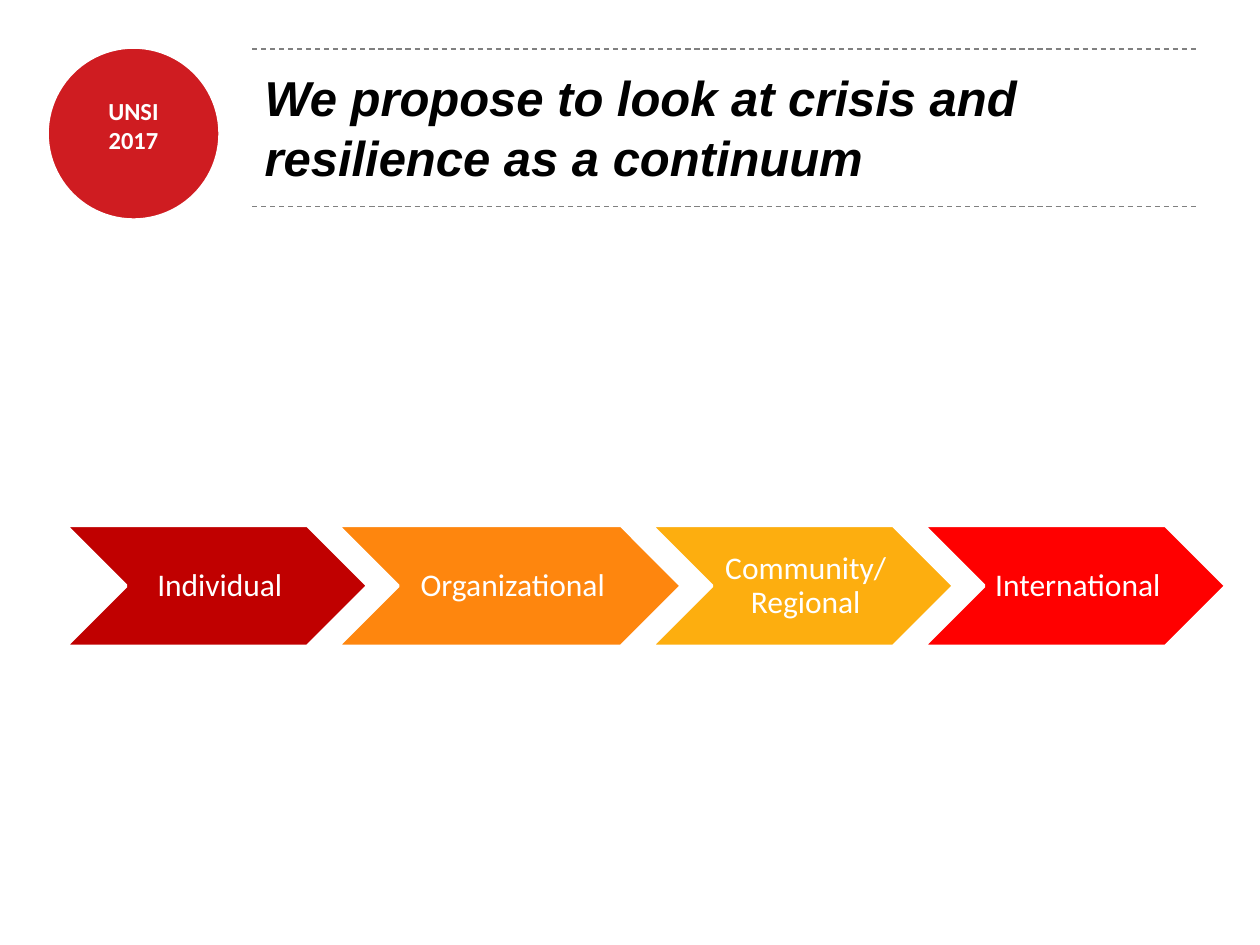
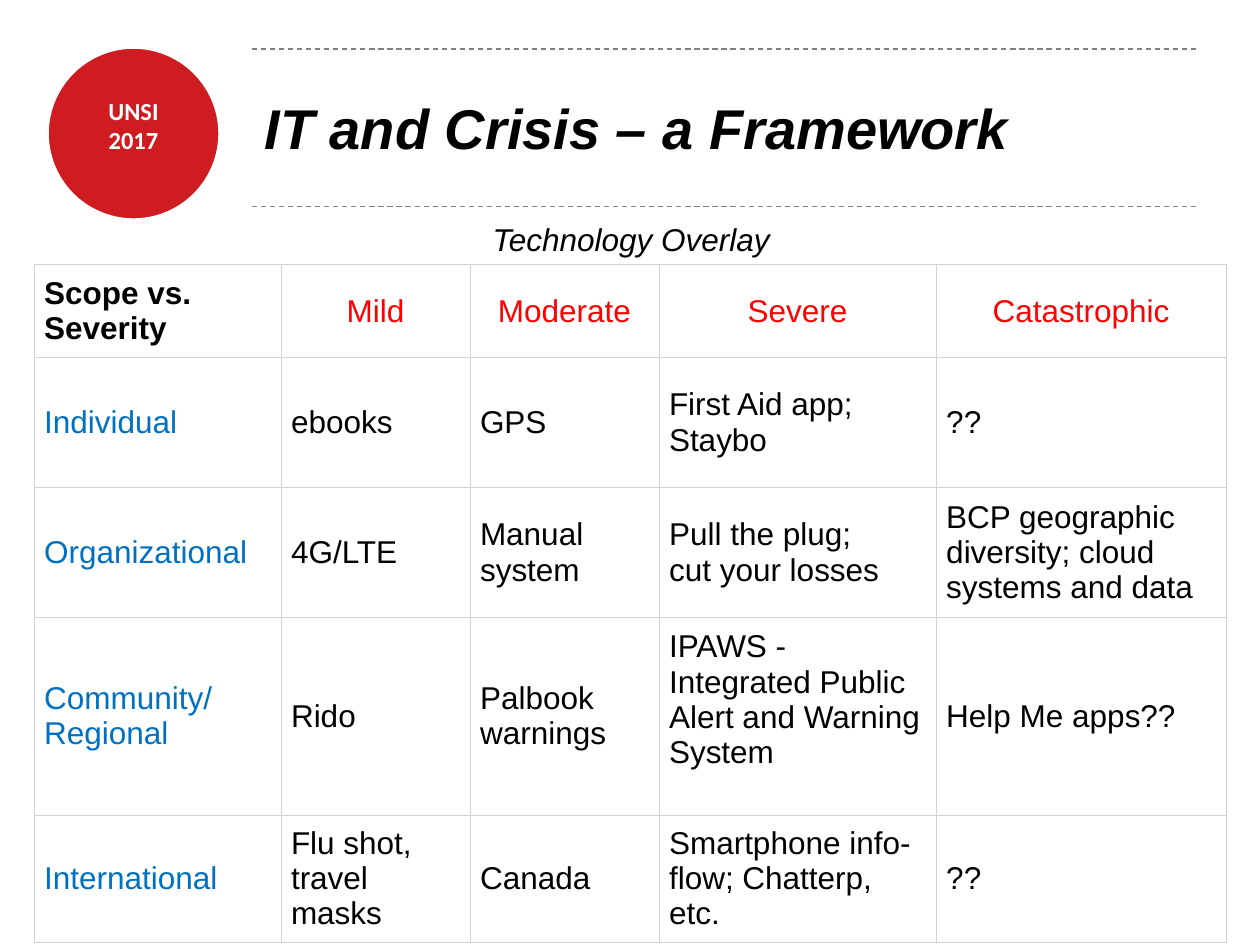
import itertools

import lxml.etree
import pptx
import pptx.dml.color
import pptx.enum.dml
import pptx.enum.shapes
import pptx.enum.text
import pptx.oxml.ns
import pptx.util

PX = 9144
COLOURS = {
    "white": "FFFFFF", "black": "000000", "badge": "CF1C21", "rule": "808080",
    "grid": "D3D3D3", "severity": "FF0000", "scope": "0070C0",
    "individual": "C00000", "organizational": "FE860E",
    "community": "FDAE0F", "international": "FF0000",
}
ALIGN = pptx.enum.text.PP_ALIGN
ANCHOR = pptx.enum.text.MSO_ANCHOR
SHAPE = pptx.enum.shapes.MSO_SHAPE


def px(*lengths):
    return [pptx.util.Emu(length * PX) for length in lengths]


def colour(name):
    return pptx.dml.color.RGBColor.from_string(COLOURS[name])


def write(holder, text, size=18, font="Arial", ink="black", bold=False, italic=False,
          align=ALIGN.LEFT, anchor=ANCHOR.MIDDLE, margins=(10, 5, 10, 5), spacing=None):
    holder.vertical_anchor = anchor
    (holder.margin_left, holder.margin_top,
     holder.margin_right, holder.margin_bottom) = px(*margins)
    holder.text = text
    for paragraph in getattr(holder, "text_frame", holder).paragraphs:
        paragraph.alignment = align
        paragraph.line_spacing = spacing
        for run in paragraph.runs:
            run.font.size = pptx.util.Pt(size)
            run.font.name = font
            run.font.bold = bold
            run.font.italic = italic
            run.font.color.rgb = colour(ink)


class Deck:
    def __init__(self):
        self.show = pptx.Presentation()
        self.show.slide_width, self.show.slide_height = px(1000, 750)
        self.slide = None

    def start(self, headline, size):
        self.slide = self.show.slides.add_slide(self.show.slide_layouts[5])
        self.shape(SHAPE.OVAL, (37, 37, 138, 138), "badge", 2.5)
        self.text((43, 76, 126, 47), "UNSI\n2017", size=14, font="Calibri", ink="white",
                  bold=True, align=ALIGN.CENTER, anchor=ANCHOR.TOP, margins=(0, 0, 0, 0))
        for y in (39, 164):
            self.rule(200, 950, y)
        title = self.slide.shapes.title
        title.left, title.top, title.width, title.height = px(200, 38, 750, 125)
        title.text_frame.word_wrap = True
        title.text_frame.auto_size = pptx.enum.text.MSO_AUTO_SIZE.NONE
        write(title.text_frame, headline, size=size, bold=True, italic=True, spacing=1.02)

    def shape(self, preset, box, fill, outline):
        shape = self.slide.shapes.add_shape(preset, *px(*box))
        shape.shadow.inherit = False
        shape.fill.solid()
        shape.fill.fore_color.rgb = colour(fill)
        shape.line.color.rgb = colour("white")
        shape.line.width = pptx.util.Pt(outline)
        return shape

    def text(self, box, text, **style):
        frame = self.slide.shapes.add_textbox(*px(*box)).text_frame
        frame.word_wrap = True
        write(frame, text, **style)

    def rule(self, left, right, y):
        rule = self.slide.shapes.add_connector(
            pptx.enum.shapes.MSO_CONNECTOR.STRAIGHT, *px(left, y, right, y))
        rule.line.color.rgb = colour("rule")
        rule.line.width = pptx.util.Pt(0.75)
        rule.line.dash_style = pptx.enum.dml.MSO_LINE.DASH
        lxml.etree.SubElement(rule.element.spPr, pptx.oxml.ns.qn("a:effectLst"))

    def chevrons(self, left, top, height, overlap, steps):
        for label, fill, width in steps:
            chevron = self.shape(SHAPE.CHEVRON, (left, top, width, height), fill, 2)
            chevron.text_frame.word_wrap = True
            write(chevron.text_frame, label, font="Calibri", ink="white",
                  align=ALIGN.CENTER, margins=(8, 3, 3, 3), spacing=0.9)
            left += width - overlap

    def table(self, left, top, widths, heights, rows):
        table = self.slide.shapes.add_table(
            len(heights), len(widths),
            *px(left, top, sum(widths), sum(heights))).table
        table.first_row = table.horz_banding = False
        for column, width in zip(table.columns, px(*widths)):
            column.width = width
        for row, height in zip(table.rows, px(*heights)):
            row.height = height
        for r, c in itertools.product(range(len(heights)), range(len(widths))):
            style = {"margins": (8, 4, 8, 4)}
            if r == 0 and c == 0:
                style["bold"] = True
            elif r == 0:
                style.update(ink="severity", align=ALIGN.CENTER)
            elif c == 0:
                style["ink"] = "scope"
            if rows[r][c].startswith("IPAWS"):
                style["margins"] = (8, 4, 8, 30)
            self.cell(table.cell(r, c), rows[r][c], **style)

    def cell(self, cell, text, **style):
        write(cell, text, **style)
        cell.fill.background()
        properties = cell._tc.get_or_add_tcPr()
        for position, side in enumerate(("lnL", "lnR", "lnT", "lnB")):
            border = lxml.etree.Element(pptx.oxml.ns.qn("a:" + side),
                                        w=str(pptx.util.Pt(0.6)))
            fill = lxml.etree.SubElement(border, pptx.oxml.ns.qn("a:solidFill"))
            lxml.etree.SubElement(fill, pptx.oxml.ns.qn("a:srgbClr"), val=COLOURS["grid"])
            properties.insert(position, border)


def main():
    deck = Deck()

    deck.start("We propose to look at crisis and resilience as a continuum", 28)
    deck.chevrons(52, 417, 96, 24, [
        ("Individual", "individual", 240),
        ("Organizational", "organizational", 273),
        ("Community/ Regional", "community", 240),
        ("International", "international", 240),
    ])

    deck.start("IT and Crisis – a Framework", 32)
    deck.table(27, 210, (196, 150, 150, 220, 230), (74, 103, 103, 157, 101), [
        ("Scope vs. Severity", "Mild", "Moderate", "Severe", "Catastrophic"),
        ("Individual", "ebooks", "GPS", "First Aid app; Staybo", "??"),
        ("Organizational", "4G/LTE", "Manual system", "Pull the plug;\ncut your losses",
         "BCP geographic diversity; cloud systems and data"),
        ("Community/\nRegional", "Rido", "Palbook warnings",
         "IPAWS - Integrated Public Alert and Warning System", "Help Me apps??"),
        ("International", "Flu shot, travel masks", "Canada",
         "Smartphone info-flow; Chatterp, etc.", "??"),
    ])
    deck.text((138, 170, 726, 40), "Technology Overlay", italic=True, align=ALIGN.CENTER)

    deck.show.save("out.pptx")


if __name__ == "__main__":
    main()
